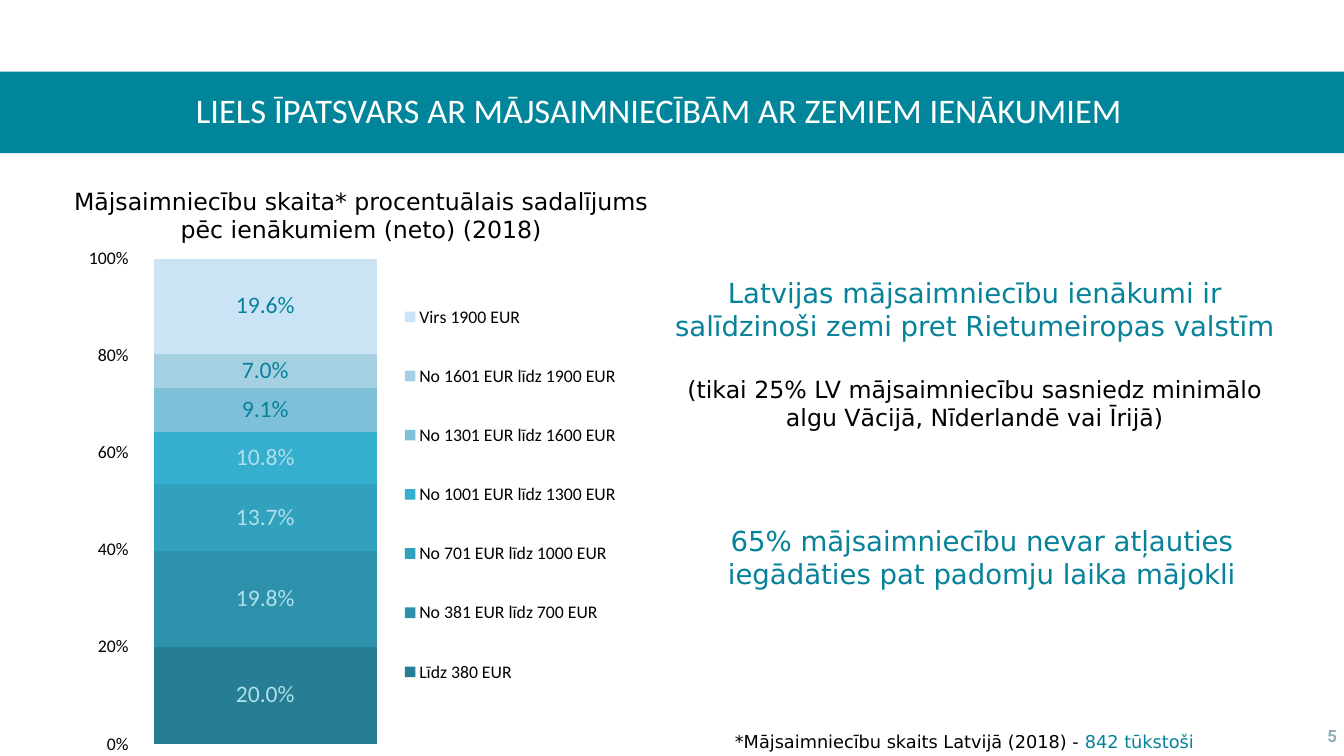
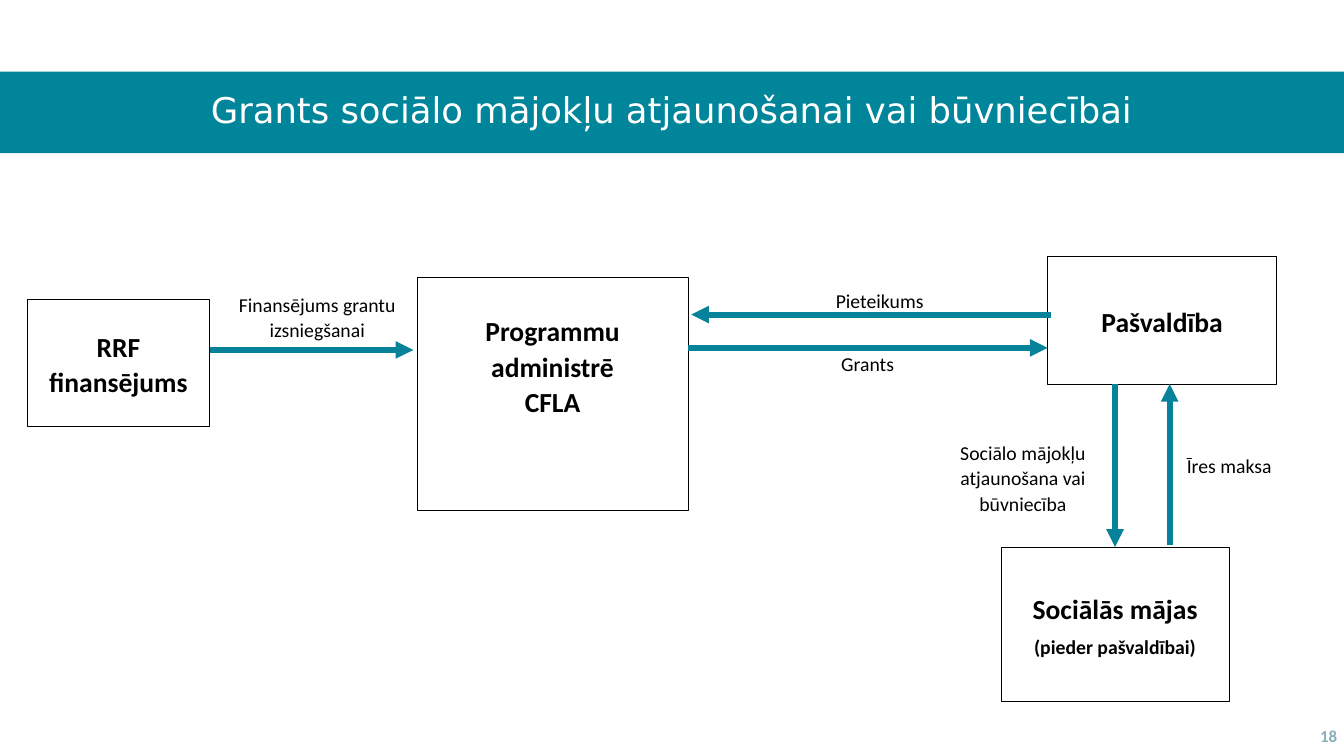
from lxml.etree import SubElement
from pptx import Presentation
from pptx.chart.data import CategoryChartData
from pptx.dml.color import RGBColor
from pptx.enum.chart import XL_CHART_TYPE, XL_LABEL_POSITION, XL_LEGEND_POSITION, XL_TICK_MARK
from pptx.enum.shapes import MSO_CONNECTOR, MSO_SHAPE
from pptx.enum.text import MSO_ANCHOR, PP_ALIGN
from pptx.oxml.ns import qn
from pptx.util import Inches, Pt

BAND, TEAL, PALE = "00859B", "06829A", "AFDFEB"
BLACK, WHITE, NUMBER_GREY = "000000", "FFFFFF", "8CAEBB"
SANS, CALIBRI, ROBOTO = "DejaVu Sans", "Calibri", "Roboto"
SLIDE_W, SLIDE_H = 18.96, 10.67
BRACKETS = [
    ("Līdz 380 EUR", 0.2, "277E94", PALE),
    ("No 381 EUR līdz 700 EUR", 0.198, "2D91AB", PALE),
    ("No 701 EUR līdz 1000 EUR", 0.137, "32A1BD", PALE),
    ("No 1001 EUR līdz 1300 EUR", 0.108, "36AFCE", PALE),
    ("No 1301 EUR līdz 1600 EUR", 0.091, "7DC0D7", TEAL),
    ("No 1601 EUR līdz 1900 EUR", 0.07, "A5D0E1", TEAL),
    ("Virs 1900 EUR", 0.196, "CAE4F6", TEAL),
]


def rgb(value):
    """Turn a hex string into a colour."""
    return RGBColor.from_string(value)


def style_font(font, size, color, name=CALIBRI, bold=False):
    """Set face, size, colour and weight of a font."""
    font.name, font.size, font.bold = name, Pt(size), bold
    font.color.rgb = rgb(color)


def write(paragraph, text, size, color, name=CALIBRI, bold=False, spacing=1.0, align=PP_ALIGN.CENTER):
    """Fill a paragraph with evenly styled text."""
    paragraph.text = text
    paragraph.alignment, paragraph.line_spacing = align, spacing
    style_font(paragraph.font, size, color, name, bold)


def add_text(slide, place, text, size, color, name=SANS, anchor=MSO_ANCHOR.TOP, **style):
    """Add a wrapping text box and return its frame."""
    frame = slide.shapes.add_textbox(*map(Inches, place)).text_frame
    frame.word_wrap, frame.vertical_anchor = True, anchor
    write(frame.paragraphs[0], text, size, color, name, **style)
    return frame


def add_label(slide, place, text):
    """Add an arrow caption without insets."""
    frame = add_text(slide, place, text, 20, BLACK, CALIBRI, spacing=1.07)
    frame.margin_left = frame.margin_right = frame.margin_top = frame.margin_bottom = 0


def add_rect(slide, place, fill, outline=None):
    """Add a flat rectangle."""
    rect = slide.shapes.add_shape(MSO_SHAPE.RECTANGLE, *map(Inches, place))
    rect.shadow.inherit = False
    rect.fill.solid()
    rect.fill.fore_color.rgb = rgb(fill)
    if outline:
        rect.line.color.rgb = rgb(outline)
        rect.line.width = Pt(0.5)
    else:
        rect.line.fill.background()
    return rect


def add_party(slide, place, text):
    """Add an outlined box naming a party of the scheme."""
    party = add_rect(slide, place, WHITE, BLACK)
    frame = party.text_frame
    frame.word_wrap, frame.vertical_anchor = True, MSO_ANCHOR.MIDDLE
    write(frame.paragraphs[0], text, 28, BLACK, bold=True, spacing=1.07)
    return party


def add_flow(slide, start, end):
    """Add a thick arrow from start to end."""
    flow = slide.shapes.add_connector(MSO_CONNECTOR.STRAIGHT, *map(Inches, start + end))
    flow.line.color.rgb = rgb(TEAL)
    flow.line.width = Pt(6)
    SubElement(flow.line._get_or_add_ln(), qn("a:tailEnd"), type="triangle")
    SubElement(flow._element.spPr, qn("a:effectLst"))
    return flow


def add_page(deck, title, size, name, title_width, number, number_font):
    """Add a slide with its title band and page number."""
    slide = deck.slides.add_slide(deck.slide_layouts[6])
    add_rect(slide, (0, 1.01, SLIDE_W, 1.15), BAND)
    add_text(slide, (0, 1.01, title_width, 1.15), title, size, WHITE, name,
             anchor=MSO_ANCHOR.MIDDLE, spacing=0.9)
    add_text(slide, (14.7, 10.1, 4.26, 0.57), number, 17.1, NUMBER_GREY, number_font,
             anchor=MSO_ANCHOR.MIDDLE, bold=True, align=PP_ALIGN.RIGHT)
    return slide


def set_layout(parent, x, y, w, h, inner=False):
    """Place a plot area or legend by fractions of the chart."""
    layout = parent.find(qn("c:layout"))
    if layout is None:
        layout = SubElement(parent, qn("c:layout"))
        if inner:
            parent.insert(0, layout)
        else:
            parent.find(qn("c:legendPos")).addnext(layout)
    manual = SubElement(layout, qn("c:manualLayout"))
    parts = [("layoutTarget", "inner")] if inner else []
    parts += [("xMode", "edge"), ("yMode", "edge"), ("x", x), ("y", y), ("w", w), ("h", h)]
    for tag, value in parts:
        SubElement(manual, qn("c:" + tag), val=str(value))


def add_income_chart(slide, place):
    """Add the stacked column of household income brackets."""
    shares = CategoryChartData(number_format="0.0%")
    shares.categories = ["1"]
    for bracket, share, _, _ in BRACKETS:
        shares.add_series(bracket, [share])
    chart = slide.shapes.add_chart(
        XL_CHART_TYPE.COLUMN_STACKED_100, *map(Inches, place), shares).chart
    style_font(chart.font, 18, BLACK)
    chart.has_title = False
    chart.has_legend = True
    chart.legend.position = XL_LEGEND_POSITION.RIGHT
    chart.legend.include_in_layout = False
    style_font(chart.legend.font, 18, BLACK)
    chart.category_axis.visible = False

    axis = chart.value_axis
    axis.minimum_scale, axis.maximum_scale, axis.major_unit = 0, 1, 0.2
    axis.has_major_gridlines = False
    axis.major_tick_mark = XL_TICK_MARK.NONE
    axis.format.line.fill.background()
    axis.tick_labels.number_format = "0%"
    axis.tick_labels.number_format_is_linked = False
    style_font(axis.tick_labels.font, 18, BLACK)

    plot = chart.plots[0]
    plot.gap_width, plot.overlap, plot.vary_by_categories = 20, 100, False
    for series, (_, _, fill, label_color) in zip(plot.series, BRACKETS):
        series.format.fill.solid()
        series.format.fill.fore_color.rgb = rgb(fill)
        labels = series.data_labels
        labels.show_value = True
        labels.position = XL_LABEL_POSITION.CENTER
        labels.number_format, labels.number_format_is_linked = "0.0%", False
        style_font(labels.font, 24, label_color)
    plot_area = chart._chartSpace.chart.plotArea
    set_layout(plot_area, 0.085, 0.021, 0.477, 0.955, inner=True)
    set_layout(chart.legend._element, 0.55, 0.04, 0.42, 0.89)


def build_income_slide(deck):
    """Build the slide on household incomes."""
    slide = add_page(deck, "LIELS ĪPATSVARS AR MĀJSAIMNIECĪBĀM AR ZEMIEM IENĀKUMIEM",
                     35, CALIBRI, 18.6, "5", ROBOTO)
    add_text(slide, (0.89, 2.59, 8.41, 0.91),
             "Mājsaimniecību skaita* procentuālais sadalījums pēc ienākumiem (neto) (2018)", 24, BLACK)
    add_income_chart(slide, (1.18, 3.5, 7.92, 7.17))
    incomes = add_text(
        slide, (9.38, 3.85, 8.74, 2.32),
        "Latvijas mājsaimniecību ienākumi ir salīdzinoši zemi pret Rietumeiropas valstīm", 28, TEAL)
    comparison = incomes.add_paragraph()
    write(comparison, "(tikai 25% LV mājsaimniecību sasniedz minimālo algu Vācijā, Nīderlandē vai Īrijā)",
          24, BLACK, SANS)
    comparison.space_before = Pt(33)
    add_text(slide, (9.48, 7.34, 8.74, 1.04),
             "65% mājsaimniecību nevar atļauties iegādāties pat padomju laika mājokli", 28, TEAL)
    footnote = add_text(slide, (8.96, 10.26, 9.29, 0.4),
                        "*Mājsaimniecību skaits Latvijā (2018) - ", 18, BLACK)
    household_count = footnote.paragraphs[0].add_run()
    household_count.text = "842 tūkstoši"
    household_count.font.color.rgb = rgb(TEAL)


def build_grant_slide(deck):
    """Build the slide on the grant scheme."""
    slide = add_page(deck, "Grants sociālo mājokļu atjaunošanai vai būvniecībai",
                     36, SANS, SLIDE_W, "18", CALIBRI)
    add_party(slide, (0.39, 4.22, 2.56, 1.8), "RRF finansējums")
    administrator = add_party(slide, (5.88, 3.91, 3.83, 3.29), "Programmu administrē\vCFLA")
    administrator.text_frame.margin_bottom = Inches(0.85)
    add_party(slide, (14.78, 3.62, 3.23, 1.8), "Pašvaldība")
    houses = add_party(slide, (14.12, 7.72, 3.22, 2.18), "Sociālās mājas")
    owner = houses.text_frame.add_paragraph()
    write(owner, "(pieder pašvaldībai)", 20, BLACK, bold=True, spacing=1.07)
    owner.space_before = Pt(8)

    add_flow(slide, (2.96, 4.94), (5.83, 4.94))
    add_flow(slide, (9.7, 4.91), (14.78, 4.91))
    add_flow(slide, (14.83, 4.44), (9.75, 4.44))
    add_flow(slide, (16.5, 7.69), (16.5, 5.42))
    add_flow(slide, (15.73, 5.42), (15.73, 7.72)).end_connect(houses, 0)

    for place, caption in [
        ((3.35, 4.11, 2.25, 0.77), "Finansējums grantu izsniegšanai"),
        ((11.53, 4.05, 1.76, 0.42), "Pieteikums"),
        ((11.36, 4.94, 1.76, 0.42), "Grants"),
        ((13.17, 6.2, 2.52, 0.83), "Sociālo mājokļu atjaunošana vai būvniecība"),
        ((16.1, 6.38, 2.48, 0.4), "Īres maksa"),
    ]:
        add_label(slide, place, caption)


def main():
    """Build and save the deck."""
    deck = Presentation()
    deck.slide_width, deck.slide_height = Inches(SLIDE_W), Inches(SLIDE_H)
    build_income_slide(deck)
    build_grant_slide(deck)
    deck.save("out.pptx")


if __name__ == "__main__":
    main()
